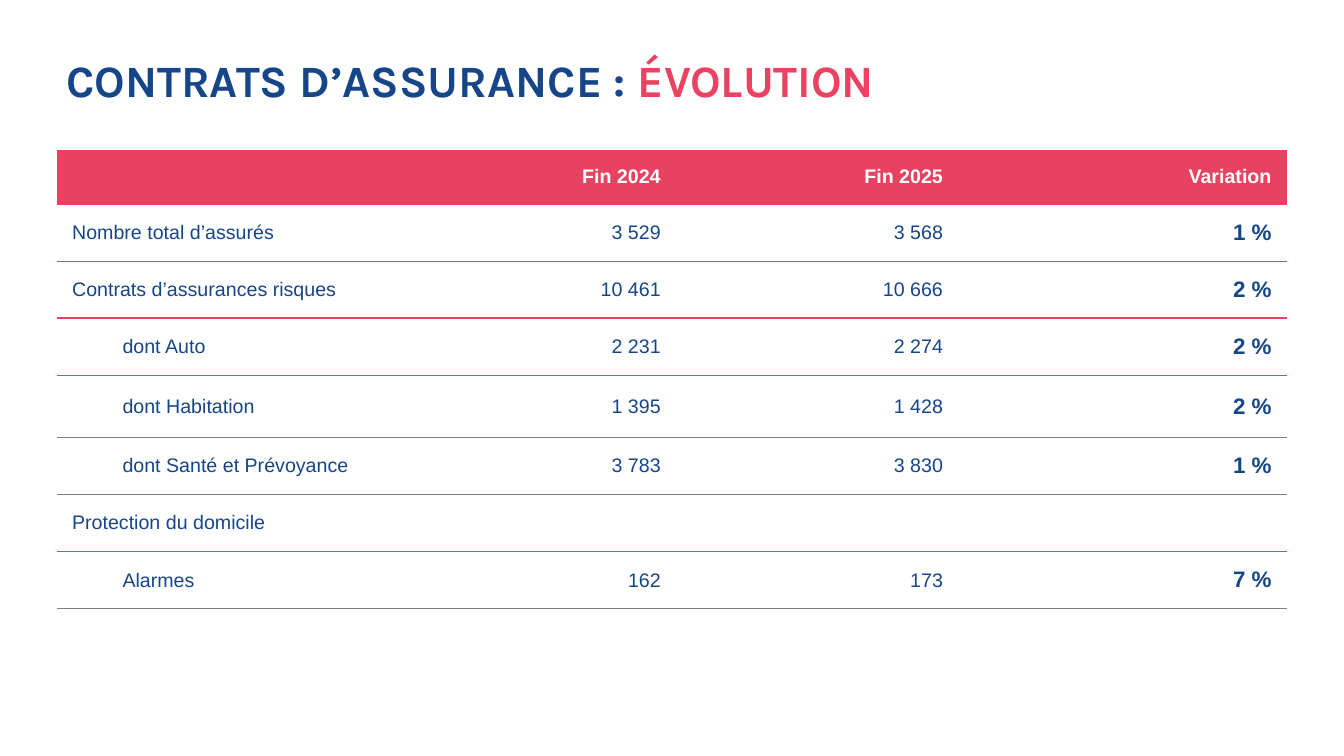
from dataclasses import dataclass

from lxml import etree
from pptx import Presentation
from pptx.dml.color import RGBColor
from pptx.enum import text
from pptx.oxml import ns
from pptx.util import Pt

COLORS = {"navy": "164687", "pink": "E94262", "rose": "E84262",
          "grey": "7F7F7F", "white": "FFFFFF"}
COLUMN_WIDTHS = (243.4, 198.7, 201.6, 234.7)
HEADINGS = ("", "Fin 2024", "Fin 2025", "Variation")
HEADING_HEIGHT = 37.8
INSET = 10.8


@dataclass
class Contract:
    label: str
    figures: tuple[str, str, str]
    height: float = 40
    detail: bool = False
    rule: str = "rose"
    rule_width: float = 1


CONTRACTS = (
    Contract("Nombre total d’assurés", ("3 529", "3 568", "1 %")),
    Contract("Contrats d’assurances risques", ("10 461", "10 666", "2 %")),
    Contract("dont Auto", ("2 231", "2 274", "2 %"), 39.3, True, rule_width=1.5),
    Contract("dont Habitation", ("1 395", "1 428", "2 %"), 44.2, True, "grey"),
    Contract("dont Santé et Prévoyance", ("3 783", "3 830", "1 %"), 40, True, "grey"),
    Contract("Protection du domicile", ("", "", ""), 39.3),
    Contract("Alarmes", ("162", "173", "7 %"), 40.6, True, "grey"),
)


def rgb(name: str) -> RGBColor:
    return RGBColor.from_string(COLORS[name])


def set_borders(cell, bottom: str, width: float, top: str | None = None) -> None:
    """Rule the cell above and below; hide its side borders."""
    properties = cell._tc.get_or_add_tcPr()
    sides = (("lnL", None), ("lnR", None), ("lnT", top), ("lnB", bottom))
    for position, (side, color) in enumerate(sides):
        if side == "lnT" and color is None:
            continue
        line = etree.Element(ns.qn(f"a:{side}"), w=str(Pt(width)))
        if color:
            fill = etree.SubElement(line, ns.qn("a:solidFill"))
            etree.SubElement(fill, ns.qn("a:srgbClr"), val=COLORS[color])
        else:
            etree.SubElement(line, ns.qn("a:noFill"))
        properties.insert(position, line)


def fill_cell(cell, words: str, color: str, size: float = 14, bold: bool = False,
              right: bool = True, indent: float = 0) -> None:
    cell.vertical_anchor = text.MSO_ANCHOR.MIDDLE
    cell.margin_left = cell.margin_right = Pt(INSET)
    cell.margin_top = cell.margin_bottom = Pt(INSET)
    paragraph = cell.text_frame.paragraphs[0]
    if words:
        paragraph.text = words
    paragraph.alignment = text.PP_ALIGN.RIGHT if right else text.PP_ALIGN.LEFT
    if indent:
        paragraph.level = 1
        paragraph._p.get_or_add_pPr().set("marL", str(Pt(indent)))
    font = paragraph.font
    font.name, font.size, font.bold = "Arial", Pt(size), bold
    font.color.rgb = rgb(color)


def add_title(slide) -> None:
    frame = slide.shapes.add_textbox(Pt(40.3), Pt(37.4), Pt(878.4), Pt(43.9)).text_frame
    frame.word_wrap = True
    frame.vertical_anchor = text.MSO_ANCHOR.MIDDLE
    title = frame.paragraphs[0]
    title.line_spacing = 0.9
    title.font.name, title.font.size, title.font.bold = "Karla", Pt(32), True
    for words, color in (("CONTRATS D’ASSURANCE : ", "navy"), ("ÉVOLUTION", "pink")):
        run = title.add_run()
        run.text = words
        run.font.color.rgb = rgb(color)


def add_contract_table(slide) -> None:
    heights = (HEADING_HEIGHT, *(contract.height for contract in CONTRACTS))
    table = slide.shapes.add_table(
        len(heights), len(COLUMN_WIDTHS), Pt(40.7), Pt(107.3),
        Pt(sum(COLUMN_WIDTHS)), Pt(sum(heights))).table
    table.horz_banding = False
    for column, width in zip(table.columns, COLUMN_WIDTHS):
        column.width = Pt(width)
    for row, height in zip(table.rows, heights):
        row.height = Pt(height)

    for column, heading in enumerate(HEADINGS):
        cell = table.cell(0, column)
        fill_cell(cell, heading, "white", bold=True)
        cell.fill.solid()
        cell.fill.fore_color.rgb = rgb("rose")
        set_borders(cell, "rose", 1, top="rose")

    variation = len(HEADINGS) - 1
    for row, contract in enumerate(CONTRACTS, start=1):
        for column, words in enumerate((contract.label, *contract.figures)):
            cell = table.cell(row, column)
            last = column == variation
            fill_cell(cell, words, "navy", 16 if last else 14, last, column > 0,
                      36 if contract.detail and column == 0 else 0)
            cell.fill.background()
            set_borders(cell, contract.rule, contract.rule_width,
                        top=CONTRACTS[row - 2].rule if row > 1 else "rose")


def main() -> None:
    deck = Presentation()
    deck.slide_width, deck.slide_height = Pt(960), Pt(540)
    slide = deck.slides.add_slide(deck.slide_layouts[6])
    add_title(slide)
    add_contract_table(slide)
    deck.save("out.pptx")


if __name__ == "__main__":
    main()
